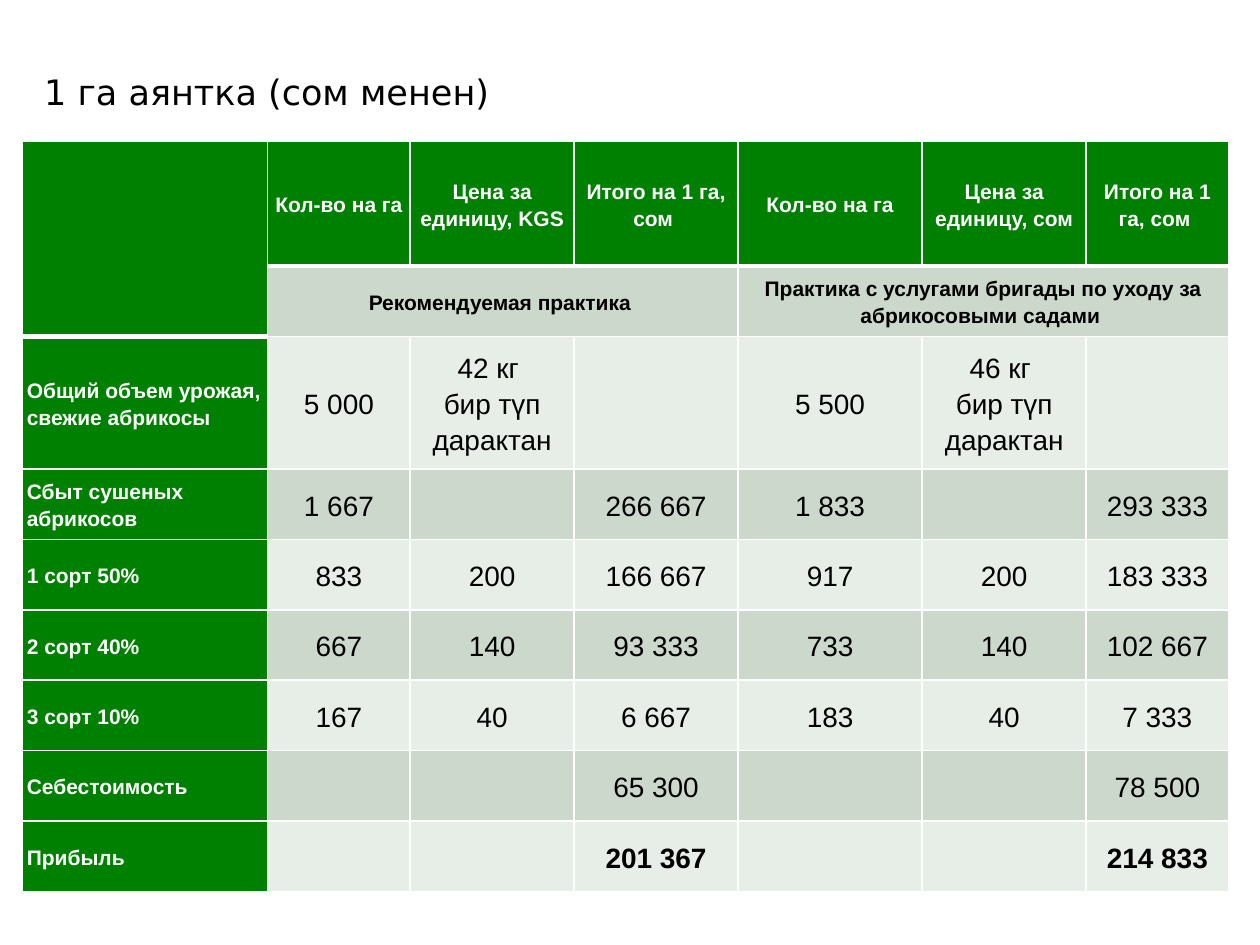
from dataclasses import dataclass

import pptx
import pptx.dml.color
import pptx.enum.text
import pptx.oxml
import pptx.oxml.ns
import pptx.util
from pptx.util import Cm


@dataclass(frozen=True)
class Theme:
    green: str = "008000"
    dark_band: str = "CCD8CC"
    light_band: str = "E7EDE7"
    white: str = "FFFFFF"
    black: str = "000000"
    title_font: str = "DejaVu Sans"
    table_font: str = "Arial"
    title_size: int = 20
    heading_size: int = 12
    value_size: int = 16
    thin_border: int = 1
    thick_border: int = 3


THEME = Theme()
TITLE = "1 га аянтка (сом менен)"
COLUMN_WIDTHS = (4.95, 2.87, 3.3, 3.3, 3.71, 3.3, 2.87)
ROW_HEIGHTS = (2.51, 1.42, 2.67) + (1.42,) * 6
ROWS = (
    ("", "Кол-во на га", "Цена за единицу, KGS", "Итого на 1 га, сом ",
     "Кол-во на га", "Цена за единицу, сом", "Итого на 1 га, сом "),
    ("", "Рекомендуемая практика ", "", "",
     "Практика с услугами бригады по уходу за абрикосовыми садами ", "", ""),
    ("Общий объем урожая, свежие абрикосы", "5 000", "42 кг \nбир түп дарактан", "",
     "5 500", "46 кг \nбир түп дарактан", ""),
    ("Сбыт сушеных абрикосов", "1 667", "", "266 667", "1 833", "", "293 333"),
    ("1 сорт 50%", "833", "200", "166 667", "917", "200", "183 333"),
    ("2 сорт 40%", "667", "140", "93 333", "733", "140", "102 667"),
    ("3 сорт 10%", "167", "40", "6 667", "183", "40", "7 333"),
    ("Себестоимость", "", "", "65 300", "", "", "78 500"),
    ("Прибыль", "", "", "201 367", "", "", "214 833"),
)
MERGES = (((0, 0), (1, 0)), ((1, 1), (1, 3)), ((1, 4), (1, 6)))


def color(code):
    return pptx.dml.color.RGBColor.from_string(code)


def style_font(font, name, size, code, bold=False):
    font.name = name
    font.size = pptx.util.Pt(size)
    font.color.rgb = color(code)
    font.bold = bold


def set_borders(cell, top, bottom):
    widths = {"lnL": THEME.thin_border, "lnR": THEME.thin_border, "lnT": top, "lnB": bottom}
    properties = cell._tc.get_or_add_tcPr()
    for position, (side, points) in enumerate(widths.items()):
        line = pptx.oxml.parse_xml(
            f'<a:{side} {pptx.oxml.ns.nsdecls("a")} w="{pptx.util.Pt(points)}">'
            f'<a:solidFill><a:srgbClr val="{THEME.white}"/></a:solidFill></a:{side}>'
        )
        properties.insert(position, line)


def fill_cell(cell, text, row, column):
    is_green = row == 0 or column == 0
    is_heading = is_green or row == 1
    band = THEME.dark_band if row % 2 else THEME.light_band
    cell.fill.solid()
    cell.fill.fore_color.rgb = color(THEME.green if is_green else band)
    cell.vertical_anchor = pptx.enum.text.MSO_ANCHOR.MIDDLE
    cell.margin_left = cell.margin_right = Cm(0.1)
    cell.margin_top = cell.margin_bottom = 0

    last_header = 1 if column == 0 else 0
    set_borders(
        cell,
        top=THEME.thick_border if row == last_header + 1 else THEME.thin_border,
        bottom=THEME.thick_border if row <= last_header else THEME.thin_border,
    )

    if not text:
        return
    cell.text = text
    alignment = pptx.enum.text.PP_ALIGN
    for para in cell.text_frame.paragraphs:
        para.alignment = alignment.LEFT if column == 0 else alignment.CENTER
        para.line_spacing = 1.15
        style_font(
            para.font,
            THEME.table_font,
            THEME.heading_size if is_heading else THEME.value_size,
            THEME.white if is_green else THEME.black,
            is_heading or row == len(ROWS) - 1,
        )


def add_budget_table(page, left, top, width, height):
    table = page.shapes.add_table(
        len(ROWS), len(COLUMN_WIDTHS), left, top, width, height
    ).table
    for column, share in zip(table.columns, COLUMN_WIDTHS):
        column.width = int(width * share / sum(COLUMN_WIDTHS))
    for row, share in zip(table.rows, ROW_HEIGHTS):
        row.height = int(height * share / sum(ROW_HEIGHTS))
    for start, end in MERGES:
        table.cell(*start).merge(table.cell(*end))
    for row, texts in enumerate(ROWS):
        for column, text in enumerate(texts):
            fill_cell(table.cell(row, column), text, row, column)


def add_title(page, left, top, width, height):
    box = page.shapes.add_textbox(left, top, width, height)
    frame = box.text_frame
    frame.word_wrap = True
    frame.vertical_anchor = pptx.enum.text.MSO_ANCHOR.MIDDLE
    para = frame.paragraphs[0]
    para.text = TITLE
    style_font(para.font, THEME.title_font, THEME.title_size, THEME.black)


def main():
    deck = pptx.Presentation()
    deck.slide_width, deck.slide_height = Cm(25.4), Cm(19.05)
    page = deck.slides.add_slide(deck.slide_layouts[6])
    add_budget_table(page, Cm(0.44), Cm(2.85), Cm(24.33), Cm(15.13))
    add_title(page, Cm(0.64), Cm(0.85), Cm(20.32), Cm(1.98))
    deck.save("out.pptx")


if __name__ == "__main__":
    main()
